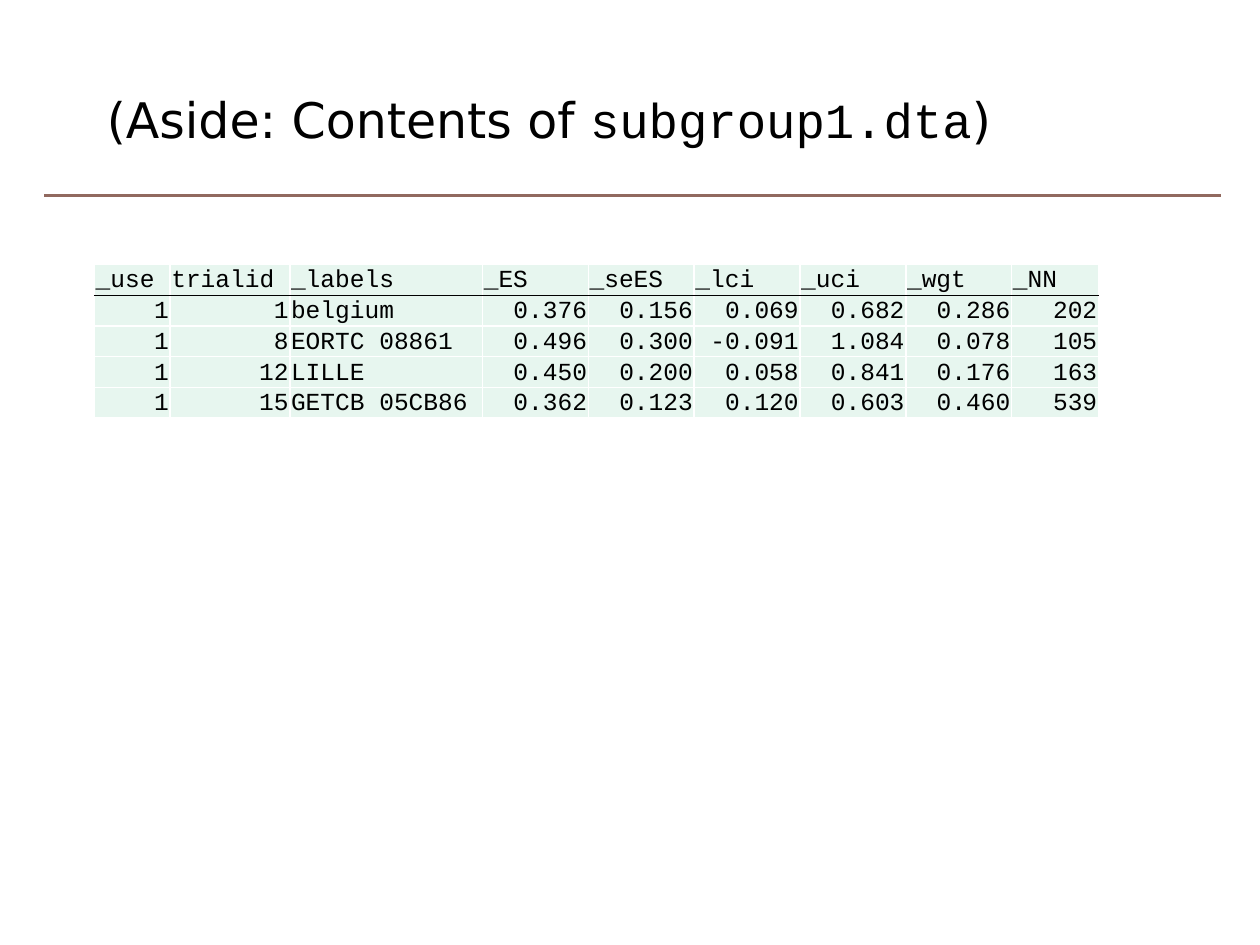
from dataclasses import dataclass

from lxml.etree import SubElement
from pptx import Presentation
from pptx.dml.color import RGBColor
from pptx.enum.shapes import MSO_CONNECTOR
from pptx.enum.text import MSO_ANCHOR, PP_ALIGN
from pptx.oxml.ns import qn
from pptx.util import Pt


@dataclass(frozen=True)
class Theme:
    ink: str = "000000"
    rule: str = "91695F"
    cell: str = "E7F6EF"
    grid: str = "FFFFFF"
    sans: str = "DejaVu Sans"
    mono: str = "Courier New"
    title: float = 28
    body: float = 14


@dataclass(frozen=True)
class Column:
    name: str
    width: float
    values: tuple[str, ...]
    align: PP_ALIGN = PP_ALIGN.RIGHT


THEME = Theme()
NUM = 60.48
COLUMNS = (
    Column("_use", 43.2, ("1", "1", "1", "1")),
    Column("trialid", 68.4, ("1", "8", "12", "15")),
    Column("_labels", 110.16,
           ("belgium", "EORTC 08861", "LILLE", "GETCB 05CB86"), PP_ALIGN.LEFT),
    Column("_ES", NUM, ("0.376", "0.496", "0.450", "0.362")),
    Column("_seES", NUM, ("0.156", "0.300", "0.200", "0.123")),
    Column("_lci", NUM, ("0.069", "-0.091", "0.058", "0.120")),
    Column("_uci", NUM, ("0.682", "1.084", "0.841", "0.603")),
    Column("_wgt", NUM, ("0.286", "0.078", "0.176", "0.460")),
    Column("_NN", 49.68, ("202", "105", "163", "539")),
)


def add_text(para, text: str, *, font: str, size: float,
             color: str = THEME.ink, align: PP_ALIGN = PP_ALIGN.LEFT) -> None:
    para.alignment = align
    run = para.add_run()
    run.text = text
    run.font.name = font
    run.font.size = Pt(size)
    run.font.color.rgb = RGBColor.from_string(color)


def add_edge(cell, side: str, color: str) -> None:
    line = SubElement(cell._tc.get_or_add_tcPr(), qn(f"a:ln{side}"), w=str(Pt(1)))
    fill = SubElement(line, qn("a:solidFill"))
    SubElement(fill, qn("a:srgbClr"), val=color)


def fill_cell(cell, text: str, row: int, align: PP_ALIGN) -> None:
    # The line under the header is shared by rows 0 and 1
    dark = {0: "B", 1: "T"}.get(row)
    for side in "LRTB":
        add_edge(cell, side, THEME.ink if side == dark else THEME.grid)
    cell.fill.solid()
    cell.fill.fore_color.rgb = RGBColor.from_string(THEME.cell)
    cell.margin_left = cell.margin_right = cell.margin_top = Pt(0.72)
    cell.margin_bottom = Pt(0)
    cell.vertical_anchor = MSO_ANCHOR.BOTTOM
    add_text(cell.text_frame.paragraphs[0], text, font=THEME.mono,
             size=THEME.body, align=align)


def add_rule(slide) -> None:
    rule = slide.shapes.add_connector(
        MSO_CONNECTOR.STRAIGHT, Pt(25.2), Pt(111.6), Pt(697.68), Pt(111.6))
    rule.line.color.rgb = RGBColor.from_string(THEME.rule)
    rule.line.width = Pt(1.75)
    SubElement(rule._element.spPr, qn("a:effectLst"))


def add_title(slide) -> None:
    box = slide.shapes.add_textbox(Pt(54), Pt(36), Pt(616.32), Pt(64.08))
    frame = box.text_frame
    frame.word_wrap = True
    frame.vertical_anchor = MSO_ANCHOR.MIDDLE
    for text, font in (("(Aside: Contents of ", THEME.sans),
                       ("subgroup1.dta", THEME.mono), (")", THEME.sans)):
        add_text(frame.paragraphs[0], text, font=font, size=THEME.title)


def add_data(slide, columns: tuple[Column, ...]) -> None:
    count = len(columns[0].values) + 1
    width = sum(col.width for col in columns)
    frame = slide.shapes.add_table(
        count, len(columns), Pt(54), Pt(151.2), Pt(width), Pt(87.84))
    table = frame.table
    for row in table.rows:
        row.height = Pt(15.12)
    for c, col in enumerate(columns):
        table.columns[c].width = Pt(col.width)
        for r, text in enumerate((col.name, *col.values)):
            align = col.align if r else PP_ALIGN.LEFT
            fill_cell(table.cell(r, c), text, r, align)


def main() -> None:
    deck = Presentation()
    deck.slide_width, deck.slide_height = Pt(720), Pt(540)
    slide = deck.slides.add_slide(deck.slide_layouts[6])

    # Heading and rule
    add_rule(slide)
    add_title(slide)

    # Data listing
    add_data(slide, COLUMNS)
    deck.save("out.pptx")


if __name__ == "__main__":
    main()
